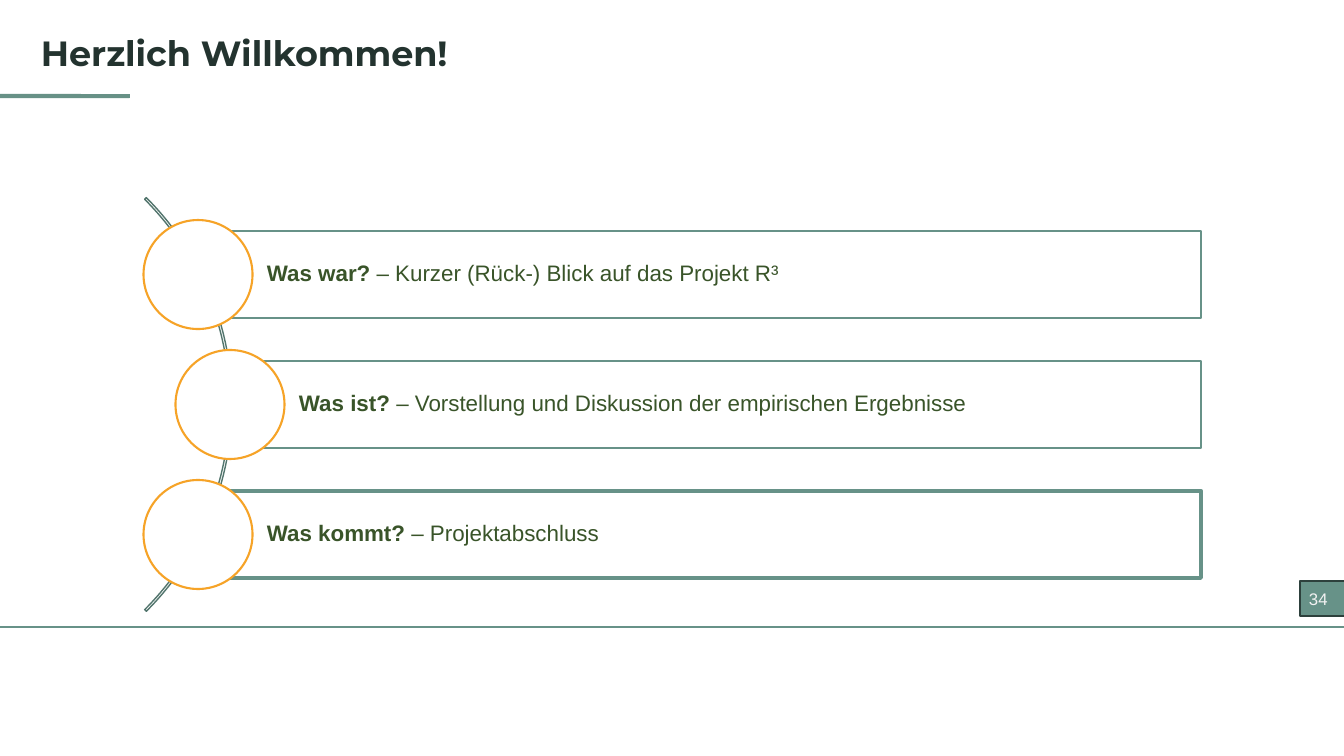
from lxml import etree
from pptx import Presentation
from pptx.dml.color import RGBColor
from pptx.enum.shapes import MSO_CONNECTOR, MSO_SHAPE
from pptx.enum.text import MSO_ANCHOR, PP_ALIGN
from pptx.oxml.ns import qn
from pptx.util import Emu, Pt

# Content
TITLE = "Herzlich Willkommen!"
PAGE_NUMBER = "34"
AGENDA = [  # question, answer, bar left, bar line width
    ("Was war? ", "– Kurzer (Rück-) Blick auf das Projekt R³", 198, 1.5),
    ("Was ist? ", "– Vorstellung und Diskussion der empirischen Ergebnisse", 230, 1.5),
    ("Was kommt? ", "– Projektabschluss", 198, 3),
]

# Colours
WHITE = RGBColor(0xFF, 0xFF, 0xFF)
GREEN = RGBColor(0x67, 0x92, 0x88)
ACCENT_GREEN = RGBColor(0x67, 0x91, 0x86)
ARC_GREEN = RGBColor(0x52, 0x75, 0x6D)
BADGE_LINE = RGBColor(0x2D, 0x40, 0x3C)
ORANGE = RGBColor(0xF6, 0xA3, 0x27)
TITLE_COLOR = RGBColor(0x23, 0x33, 0x2F)
TEXT_GREEN = RGBColor(0x39, 0x54, 0x29)
NUMBER_COLOR = RGBColor(0xF2, 0xF2, 0xF2)

# Layout in px
SLIDE_WIDTH, SLIDE_HEIGHT = 1344, 756
BAR_TOP, BAR_HEIGHT, BAR_RIGHT, BAR_PITCH = 231, 87, 1201, 130
CIRCLE_SIZE = 109
ARC_LEFT, ARC_SIZE = -353, 585
FOOTER_Y = 627


def px(length):
    return Emu(round(length * 914400 / 100.8))


presentation = Presentation()
presentation.slide_width = px(SLIDE_WIDTH)
presentation.slide_height = px(SLIDE_HEIGHT)
slide = presentation.slides.add_slide(presentation.slide_layouts[6])


def add_shape(kind, box, fill=None, line=None, line_width=1):
    shape = slide.shapes.add_shape(kind, *map(px, box))
    shape.shadow.inherit = False
    if fill is None:
        shape.fill.background()
    else:
        shape.fill.solid()
        shape.fill.fore_color.rgb = fill
    if line is None:
        shape.line.fill.background()
    else:
        shape.line.color.rgb = line
        shape.line.width = Pt(line_width)
    return shape


def write(shape, *runs, size, color, font="Arial", spacing=1.0,
          anchor=MSO_ANCHOR.TOP, insets=(10, 5, 10, 5)):
    """Write one left-aligned paragraph; each run is (text, bold)."""
    frame = shape.text_frame
    frame.word_wrap = True
    frame.vertical_anchor = anchor
    (frame.margin_left, frame.margin_top,
     frame.margin_right, frame.margin_bottom) = map(px, insets)
    paragraph = frame.paragraphs[0]
    paragraph.alignment = PP_ALIGN.LEFT
    paragraph.line_spacing = spacing
    for text, bold in runs:
        run = paragraph.add_run()
        run.text = text
        run.font.name = font
        run.font.size = Pt(size)
        run.font.bold = bold
        run.font.color.rgb = color


# Footer line and page number
footer = slide.shapes.add_connector(
    MSO_CONNECTOR.STRAIGHT, px(-8), px(FOOTER_Y), px(1355), px(FOOTER_Y))
footer.line.color.rgb = GREEN
footer.line.width = Pt(0.75)
etree.SubElement(footer.element.spPr, qn("a:effectLst"))

add_shape(MSO_SHAPE.RECTANGLE, (1300, 581, 52, 35), GREEN, BADGE_LINE)
number = slide.shapes.add_textbox(*map(px, (1299, 584, 65, 30)))
write(number, (PAGE_NUMBER, False), size=12, color=NUMBER_COLOR)

# Title with accent bar
add_shape(MSO_SHAPE.ROUNDED_RECTANGLE, (-10, 94, 140, 4), ACCENT_GREEN)
title = slide.shapes.add_textbox(*map(px, (31, 31, 793, 52)))
write(title, (TITLE, True), size=25, color=TITLE_COLOR, font="Montserrat", spacing=0.9)

# Arc, centred on the agenda
agenda_middle = BAR_TOP + ((len(AGENDA) - 1) * BAR_PITCH + BAR_HEIGHT) / 2
arc = add_shape(MSO_SHAPE.BLOCK_ARC,
                (ARC_LEFT, agenda_middle - ARC_SIZE / 2, ARC_SIZE, ARC_SIZE),
                line=ARC_GREEN)
for index, value in enumerate((189, 27, 0.004)):
    arc.adjustments[index] = value

# Agenda bars, each with a circle centred on its left edge
for row, (question, answer, left, line_width) in enumerate(AGENDA):
    top = BAR_TOP + row * BAR_PITCH
    bar = add_shape(MSO_SHAPE.RECTANGLE, (left, top, BAR_RIGHT - left, BAR_HEIGHT),
                    line=GREEN, line_width=line_width)
    write(bar, (question, True), (answer, False), size=16, color=TEXT_GREEN,
          spacing=0.9, anchor=MSO_ANCHOR.MIDDLE, insets=(69, 4, 4, 4))
    add_shape(MSO_SHAPE.OVAL,
              (left - CIRCLE_SIZE / 2, top + (BAR_HEIGHT - CIRCLE_SIZE) / 2,
               CIRCLE_SIZE, CIRCLE_SIZE),
              WHITE, ORANGE, 1.5)

presentation.save("out.pptx")
